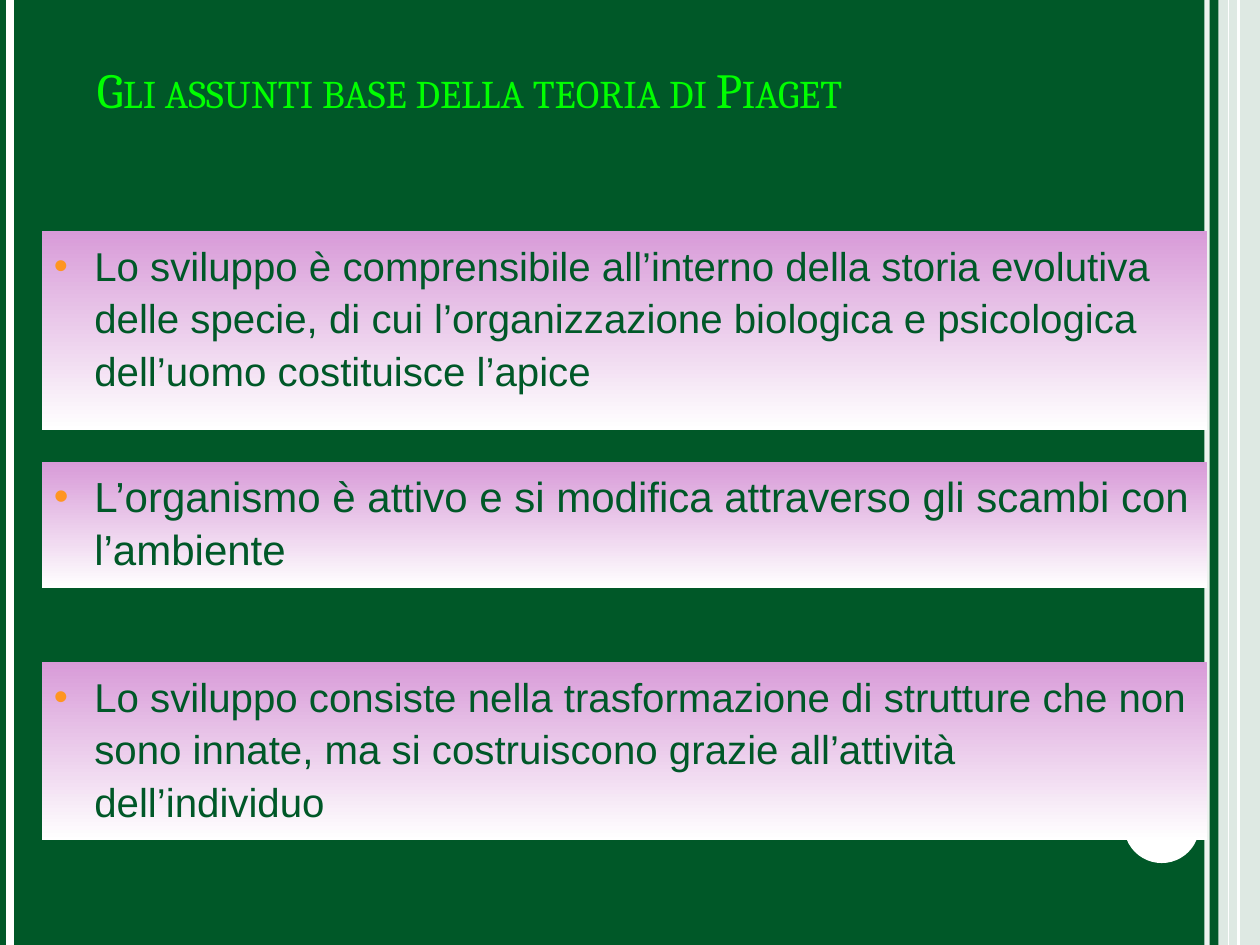
from dataclasses import dataclass

from lxml import etree
from pptx import Presentation
from pptx.dml.color import RGBColor
from pptx.enum.shapes import MSO_CONNECTOR, MSO_SHAPE
from pptx.enum.text import MSO_ANCHOR, MSO_AUTO_SIZE, PP_ALIGN
from pptx.oxml.ns import qn
from pptx.util import Inches, Pt

RECTANGLE, OVAL = MSO_SHAPE.RECTANGLE, MSO_SHAPE.OVAL
STRAIGHT = MSO_CONNECTOR.STRAIGHT
TOP, BOTTOM = MSO_ANCHOR.TOP, MSO_ANCHOR.BOTTOM
LEFT = PP_ALIGN.LEFT
GROW = MSO_AUTO_SIZE.SHAPE_TO_FIT_TEXT


@dataclass(frozen=True)
class Theme:
    green: str = "005828"
    white: str = "FFFFFF"
    lilac: str = "D89BD8"
    orange: str = "FF9521"
    lime: str = "00FF00"
    title_font: str = "Cambria"
    body_font: str = "Arial"
    title_size: int = 28
    body_size: int = 23
    large_body_size: int = 24
    line_spacing: int = 30


THEME = Theme()
SLIDE_WIDTH, SLIDE_HEIGHT = 10, 7.5

# x position, width in points, opacity in percent
VERTICAL_RULES = [(9.58, 3, 93), (0.08, 4.5, 100), (9.83, 1.5, 100)]
INNER_BAND_RULE = (9.75, 0.75, 100)

# top, height, text size, text
ASSUMPTIONS = [
    (1.83, 1.58, THEME.body_size,
     "Lo sviluppo è comprensibile all’interno della storia evolutiva delle specie, "
     "di cui l’organizzazione biologica e psicologica dell’uomo costituisce l’apice"),
    (3.67, 1, THEME.large_body_size,
     "L’organismo è attivo e si modifica attraverso gli scambi con l’ambiente"),
    (5.25, 1.42, THEME.body_size,
     "Lo sviluppo consiste nella trasformazione di strutture che non sono innate, "
     "ma si costruiscono grazie all’attività dell’individuo"),
]


def color(value):
    return RGBColor.from_string(value)


def set_opacity(fill, percent):
    srgb = fill._xPr.find(qn("a:solidFill")).find(qn("a:srgbClr"))
    etree.SubElement(srgb, qn("a:alpha"), val=str(percent * 1000))


def add_bullet(paragraph, bullet_color, indent):
    properties = paragraph._p.get_or_add_pPr()
    properties.set("marL", str(Inches(indent)))
    properties.set("indent", str(-Inches(indent)))
    bullet = etree.SubElement(properties, qn("a:buClr"))
    etree.SubElement(bullet, qn("a:srgbClr"), val=bullet_color)
    etree.SubElement(properties, qn("a:buFont"), typeface=THEME.body_font)
    etree.SubElement(properties, qn("a:buChar"), char="•")


def write_text(shape, text, *, size, font, text_color, anchor=TOP,
               line_spacing=None, bullet_color=None, small_caps=False):
    frame = shape.text_frame
    frame.word_wrap = True
    frame.vertical_anchor = anchor
    paragraph = frame.paragraphs[0]
    paragraph.alignment = LEFT
    if line_spacing:
        paragraph.line_spacing = Pt(line_spacing)
    if bullet_color:
        add_bullet(paragraph, bullet_color, 0.32)
    run = paragraph.add_run()
    run.text = text
    run.font.size = Pt(size)
    run.font.name = font
    run.font.color.rgb = color(text_color)
    if small_caps:
        run.font._element.set("cap", "small")


def add_plain_shape(slide, kind, box):
    shape = slide.shapes.add_shape(kind, *map(Inches, box))
    shape.shadow.inherit = False
    shape.line.fill.background()
    return shape


def add_vertical_rule(slide, x, width, opacity):
    rule = slide.shapes.add_connector(
        STRAIGHT, Inches(x), 0, Inches(x), Inches(SLIDE_HEIGHT))
    rule.line.width = Pt(width)
    rule.line.color.rgb = color(THEME.white)
    if opacity < 100:
        set_opacity(rule.line.fill, opacity)
    etree.SubElement(rule._element.spPr, qn("a:effectLst"))


def add_frame(slide, band_box, circle_box):
    """Edge rules, pale right band and white circle."""
    for rule in VERTICAL_RULES:
        add_vertical_rule(slide, *rule)
    band = add_plain_shape(slide, RECTANGLE, band_box)
    band.fill.solid()
    band.fill.fore_color.rgb = color(THEME.white)
    set_opacity(band.fill, 87)
    add_vertical_rule(slide, *INNER_BAND_RULE)
    circle = add_plain_shape(slide, OVAL, circle_box)
    circle.fill.solid()
    circle.fill.fore_color.rgb = color(THEME.white)


def add_assumption(slide, box, text, size):
    """Bulleted statement on a lilac-to-white panel."""
    panel = add_plain_shape(slide, RECTANGLE, box)
    panel.fill.gradient()
    panel.fill.gradient_angle = 270
    stops = zip(panel.fill.gradient_stops, (0, 1), (THEME.lilac, THEME.white))
    for stop, position, stop_color in stops:
        stop.position = position
        stop.color.rgb = color(stop_color)
    write_text(panel, text, size=size, font=THEME.body_font,
               text_color=THEME.green, line_spacing=THEME.line_spacing,
               bullet_color=THEME.orange)


def add_title(slide, box, text):
    title = slide.shapes.add_textbox(*map(Inches, box))
    write_text(title, text, size=THEME.title_size, font=THEME.title_font,
               text_color=THEME.lime, anchor=BOTTOM, small_caps=True)
    title.text_frame.auto_size = GROW


def main():
    presentation = Presentation()
    presentation.slide_width = Inches(SLIDE_WIDTH)
    presentation.slide_height = Inches(SLIDE_HEIGHT)
    slide = presentation.slides.add_slide(presentation.slide_layouts[6])
    slide.background.fill.solid()
    slide.background.fill.fore_color.rgb = color(THEME.green)

    add_frame(slide, (9.67, 0, 0.33, SLIDE_HEIGHT), (8.92, 6.25, 0.6, 0.6))
    for top, height, size, text in ASSUMPTIONS:
        add_assumption(slide, (0.33, top, 9.25, height), text, size)
    add_title(slide, (0.67, 0.42, 8.5, 0.57),
              "Gli assunti base della teoria di Piaget")
    presentation.save("out.pptx")


if __name__ == "__main__":
    main()
